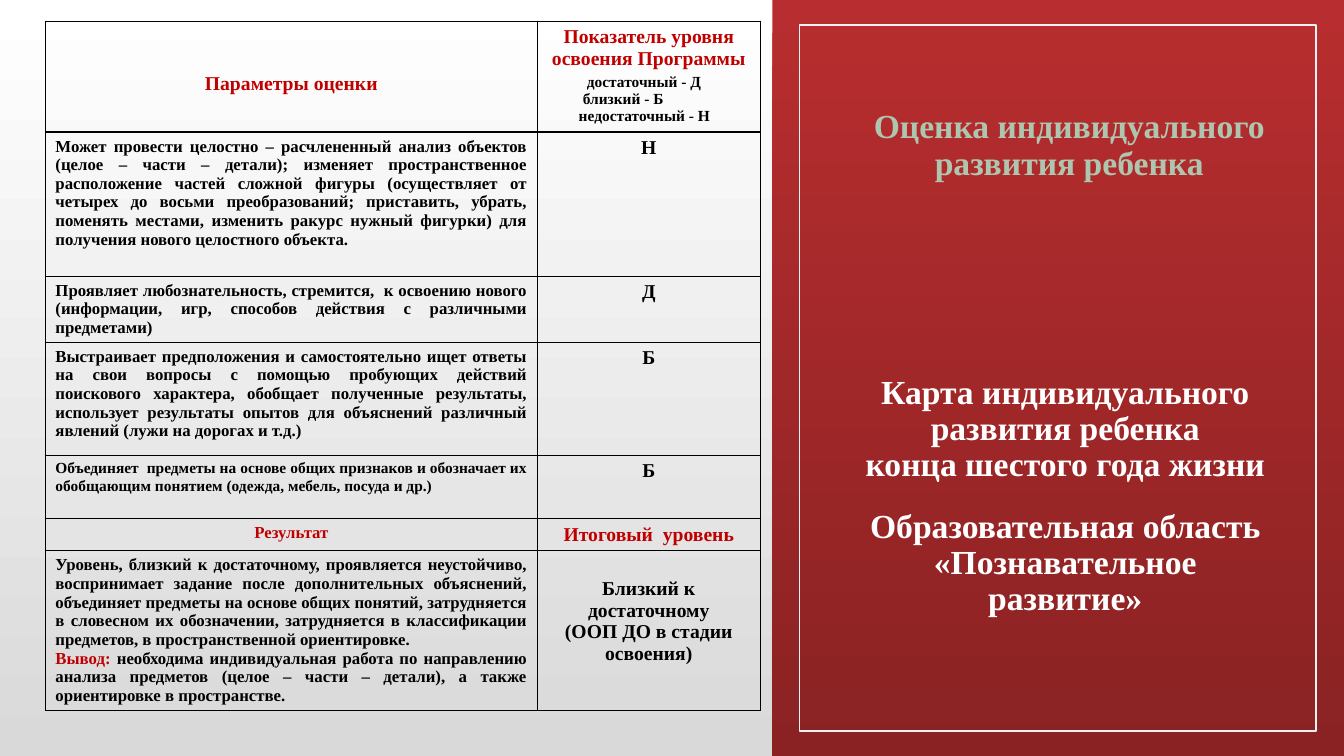
"""Build the slide with a child development assessment table and a red title panel."""
from dataclasses import dataclass, field

from lxml import etree
from pptx import Presentation
from pptx.dml.color import RGBColor
from pptx.enum.shapes import MSO_SHAPE
from pptx.enum.text import MSO_ANCHOR, MSO_AUTO_SIZE, PP_ALIGN
from pptx.oxml.ns import qn
from pptx.util import Inches, Pt

RECTANGLE = MSO_SHAPE.RECTANGLE
TOP, BOTTOM = MSO_ANCHOR.TOP, MSO_ANCHOR.BOTTOM
NO_AUTOFIT = MSO_AUTO_SIZE.NONE
LEFT, CENTER, JUSTIFY = PP_ALIGN.LEFT, PP_ALIGN.CENTER, PP_ALIGN.JUSTIFY
FONT = "Times New Roman"
COLORS = {
    "black": "000000", "white": "FFFFFF", "gray": "D9D9D9", "frame": "F2F2F2",
    "accent": "C00000", "sage": "AEC5AF", "red": "B82D2F", "dark red": "8A2223",
}
COLUMN_WIDTHS = (4.88, 2.21)
ROW_HEIGHTS = (1.1, 1.43, 0.65, 1.12, 0.63, 0.32, 1.58)


@dataclass
class Span:
    """A piece of text in one colour."""
    text: str
    color: str = "black"


@dataclass
class Para:
    """A paragraph with its spans and format."""
    spans: list[Span]
    size: float = 12
    align: PP_ALIGN = JUSTIFY
    indent: float = 0
    format: dict = field(default_factory=dict)


@dataclass
class Entry:
    """The contents of one table cell."""
    paras: list[Para]
    margin_top: float = 0.05


def centered(text: str, color: str = "black", size: float = 14) -> Para:
    """Return a centred paragraph of one span."""
    return Para([Span(text, color)], size, CENTER)


def level(text: str, indent: float, space: float = 0) -> Para:
    """Return one line of the key to the levels."""
    return Para([Span(text)], 11, LEFT, indent, {"space_before": Pt(space)})


def criterion(text: str, grade: str, size: float = 12) -> tuple[Entry, Entry]:
    """Return a table row with a criterion and its grade."""
    return Entry([Para([Span(text)], size)]), Entry([centered(grade)])


def heading(text: str, color: str, space: float = 0) -> Para:
    """Return a large paragraph of the title panel."""
    para = centered(text, color, 24)
    para.format = {"line_spacing": 0.9, "space_before": Pt(space)}
    return para


ROWS = [
    (Entry([centered("Параметры оценки", "accent")], 0.51),
     Entry([centered("Показатель уровня освоения Программы", "accent"),
            level("достаточный - Д", 0.39, 3),
            level("близкий - Б", 0.35),
            level("недостаточный - Н", 0.31)])),
    criterion("Может провести целостно – расчлененный анализ объектов (целое – части – детали); "
              "изменяет пространственное расположение частей сложной фигуры (осуществляет от "
              "четырех до восьми преобразований; приставить, убрать, поменять местами, изменить "
              "ракурс нужный фигурки) для получения нового целостного объекта.", "Н"),
    criterion("Проявляет любознательность, стремится,  к освоению нового (информации, игр, "
              "способов действия с различными предметами)", "Д"),
    criterion("Выстраивает предположения и самостоятельно ищет ответы на свои вопросы с помощью "
              "пробующих действий поискового характера, обобщает полученные результаты, "
              "использует результаты опытов для объяснений различный явлений (лужи на дорогах "
              "и т.д.)", "Б"),
    criterion("Объединяет  предметы на основе общих признаков и обозначает их обобщающим "
              "понятием (одежда, мебель, посуда и др.)", "Б", 11),
    (Entry([centered("Результат", "accent", 12)]),
     Entry([centered("Итоговый  уровень", "accent")])),
    (Entry([Para([Span("Уровень, близкий к достаточному, проявляется неустойчиво, воспринимает "
                       "задание после дополнительных объяснений, объединяет предметы на основе "
                       "общих понятий, затрудняется в словесном их обозначении, затрудняется в "
                       "классификации предметов, в пространственной ориентировке.")]),
            Para([Span("Вывод: ", "accent"),
                  Span("необходима индивидуальная работа по направлению анализа предметов "
                       "(целое – части – детали), а также ориентировке в пространстве.")])]),
     Entry([centered("Близкий к достаточному"), centered("(ООП ДО в стадии освоения)")], 0.27)),
]
TITLE = [heading("Оценка индивидуального развития ребенка", "sage")]
BODY = [
    heading("Карта индивидуального развития ребенка\vконца шестого года жизни", "white"),
    heading("Образовательная область «Познавательное развитие»", "white", 18),
]


def rgb(name: str) -> RGBColor:
    """Return a named colour."""
    return RGBColor.from_string(COLORS[name])


def set_values(target, values: dict) -> None:
    """Set each attribute of the target from a dict."""
    for name, value in values.items():
        setattr(target, name, value)


def write(frame, paras: list[Para]) -> None:
    """Fill a text frame with paragraphs."""
    for number, para in enumerate(paras):
        paragraph = frame.add_paragraph() if number else frame.paragraphs[0]
        set_values(paragraph, {"alignment": para.align, "space_before": Pt(0), **para.format})
        properties = paragraph._p.get_or_add_pPr()
        properties.set("marL", str(Inches(para.indent)))
        properties.set("indent", "0")
        etree.SubElement(properties, qn("a:buNone"))
        for piece in para.spans:
            for number_in_piece, line in enumerate(piece.text.split("\v")):
                if number_in_piece:
                    paragraph.add_line_break()
                span = paragraph.add_run()
                span.text = line
                set_values(span.font, {"name": FONT, "size": Pt(para.size), "bold": True})
                span.font.color.rgb = rgb(piece.color)


def paint_gradient(fill, names: tuple[str, str], angle: float) -> None:
    """Apply a two-colour linear gradient."""
    fill.gradient()
    fill.gradient_angle = angle
    for stop, name in zip(fill.gradient_stops, names):
        stop.color.rgb = rgb(name)


def add_box(page, left: float, top: float, width: float, height: float):
    """Add a plain rectangle without a shadow."""
    box = page.shapes.add_shape(
        RECTANGLE, Inches(left), Inches(top), Inches(width), Inches(height))
    box.shadow.inherit = False
    return box


def add_borders(cell) -> None:
    """Draw black lines on all sides of a cell."""
    properties = cell._tc.get_or_add_tcPr()
    for position, side in enumerate(("lnL", "lnR", "lnT", "lnB")):
        line = etree.Element(qn(f"a:{side}"), w=str(Pt(1)))
        solid = etree.SubElement(line, qn("a:solidFill"))
        etree.SubElement(solid, qn("a:srgbClr"), val=COLORS["black"])
        properties.insert(position, line)


def add_assessment(page) -> None:
    """Add the assessment table."""
    table = page.shapes.add_table(
        len(ROWS), len(COLUMN_WIDTHS), Inches(0.45), Inches(0.21),
        Inches(sum(COLUMN_WIDTHS)), Inches(sum(ROW_HEIGHTS))).table
    set_values(table, {"first_row": False, "horz_banding": False})
    for column, width in zip(table.columns, COLUMN_WIDTHS):
        column.width = Inches(width)
    for row, height, entries in zip(table.rows, ROW_HEIGHTS, ROWS):
        row.height = Inches(height)
        for cell, entry in zip(row.cells, entries):
            cell.fill.background()
            cell.margin_top = Inches(entry.margin_top)
            add_borders(cell)
            write(cell.text_frame, entry.paras)


def fill_placeholder(box, place: tuple, anchor: MSO_ANCHOR, paras: list[Para]) -> None:
    """Move a placeholder and write its text."""
    set_values(box, dict(zip(("left", "top", "width", "height"), map(Inches, place))))
    set_values(box.text_frame, {
        "word_wrap": True, "auto_size": NO_AUTOFIT, "vertical_anchor": anchor})
    write(box.text_frame, paras)


def main() -> None:
    """Build and save the deck."""
    deck = Presentation()
    set_values(deck, {"slide_width": Inches(13.33), "slide_height": Inches(7.5)})
    page = deck.slides.add_slide(deck.slide_layouts[1])
    title, body = page.placeholders
    paint_gradient(page.background.fill, ("gray", "white"), 90)
    panel = add_box(page, 7.66, 0, 5.67, 7.5)
    paint_gradient(panel.fill, ("red", "dark red"), 270)
    panel.line.fill.background()
    frame = add_box(page, 7.93, 0.25, 5.12, 7)
    frame.fill.background()
    frame.line.color.rgb = rgb("frame")
    frame.line.width = Pt(1.25)
    add_assessment(page)
    fill_placeholder(title, (8.4, 0.76, 4.41, 1.1), BOTTOM, TITLE)
    fill_placeholder(body, (8.4, 3.67, 4.33, 2.6), TOP, BODY)
    for box in (title, body):
        page.shapes._spTree.append(box._element)
    deck.save("out.pptx")


if __name__ == "__main__":
    main()
